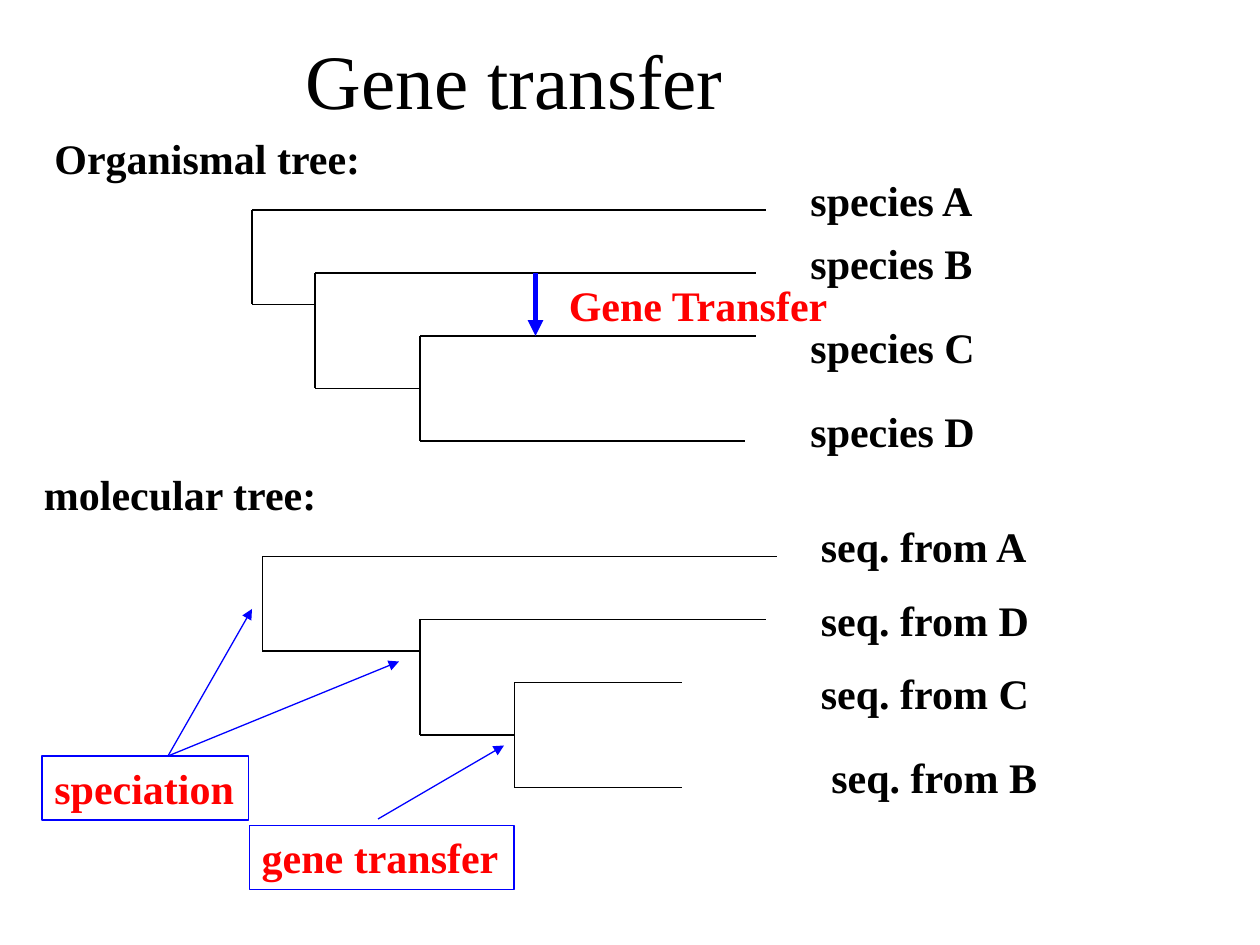
from dataclasses import dataclass

from lxml.etree import SubElement
from pptx import Presentation
from pptx.dml.color import RGBColor
from pptx.enum.shapes import MSO_CONNECTOR
from pptx.enum.text import MSO_ANCHOR, PP_ALIGN
from pptx.oxml.ns import qn
from pptx.util import Inches, Length, Pt

FONT = "Times New Roman"
BLACK, BLUE, RED = "000000", "0000FF", "FF0000"
CELLS_PER_INCH = 12  # the slide is a grid of 120 columns by 90 rows


@dataclass
class Clade:
    """A fork at one column, with an upper and a lower branch."""
    col: float
    top: float
    bottom: float
    top_end: float
    bottom_end: float


@dataclass
class Label:
    text: str
    col: float
    row: float
    cols: float
    rows: float = 6
    color: str = BLACK
    size: float = 24
    bold: bool = True
    border: str = ""
    centred: bool = False


@dataclass
class Arrow:
    start: tuple[float, float]
    end: tuple[float, float]
    width: float = 0.75


ORGANISMAL_TREE = [
    Clade(24, 20, 29, 73, 30),
    Clade(30, 26, 37, 72, 40),
    Clade(40, 32, 42, 72, 71),
]
MOLECULAR_TREE = [
    Clade(25, 53, 62, 74, 40),
    Clade(40, 59, 70, 73, 49),
    Clade(49, 65, 75, 65, 65),
]
LABELS = [
    Label("Gene transfer", 0, 0, 98, 15, size=44, bold=False, centred=True),
    Label("Organismal tree:", 4, 12, 32.6),
    Label("species A", 76, 16, 18.4),
    Label("species B", 76, 22, 18.4),
    Label("species C", 76, 30, 18.6),
    Label("species D", 76, 38, 18.6),
    Label("Gene Transfer", 53, 26, 27.4, color=RED),
    Label("molecular tree:", 3, 44, 28.7),
    Label("seq. from A", 77, 49, 22.3),
    Label("seq. from D", 77, 56, 22.4),
    Label("seq. from C", 77, 63, 22.4),
    Label("seq. from B", 78, 71, 22.2),
    Label("speciation", 4, 72, 19.7, 6.1, RED, border=BLUE),
    Label("gene transfer", 23.75, 78.6, 25.2, 6.1, RED, border=BLUE),
]
ARROWS = [
    Arrow((51, 26), (51, 32), 3),
    Arrow((16, 72), (24, 58)),
    Arrow((16, 72), (38, 63)),
    Arrow((36, 78), (48, 71)),
]


def cells(n: float) -> Length:
    return Inches(n / CELLS_PER_INCH)


def rgb(color: str) -> RGBColor:
    return RGBColor.from_string(color)


def add_line(s, start, end, color: str = BLACK, width: float = 0.75):
    line = s.shapes.add_connector(
        MSO_CONNECTOR.STRAIGHT, *(cells(n) for n in (*start, *end)))
    line.line.color.rgb = rgb(color)
    line.line.width = Pt(width)
    SubElement(line._element.spPr, qn("a:effectLst"))
    return line


def add_arrow(s, arrow: Arrow) -> None:
    line = add_line(s, arrow.start, arrow.end, BLUE, arrow.width)
    SubElement(line.line._get_or_add_ln(), qn("a:tailEnd"), type="triangle")


def add_clade(s, clade: Clade) -> None:
    upper, lower = (clade.col, clade.top), (clade.col, clade.bottom)
    add_line(s, upper, lower)
    add_line(s, upper, (clade.top_end, clade.top))
    add_line(s, lower, (clade.bottom_end, clade.bottom))


def add_label(s, label: Label) -> None:
    sp = s.shapes.add_textbox(
        *(cells(n) for n in (label.col, label.row, label.cols, label.rows)))
    if label.border:
        sp.line.color.rgb = rgb(label.border)
        sp.line.width = Pt(0.75)
    tf = sp.text_frame
    tf.word_wrap = label.centred
    tf.text = label.text
    p = tf.paragraphs[0]
    if label.centred:
        tf.vertical_anchor = MSO_ANCHOR.MIDDLE
        p.alignment = PP_ALIGN.CENTER
    font = p.runs[0].font
    font.name, font.size, font.bold = FONT, Pt(label.size), label.bold
    font.color.rgb = rgb(label.color)


def main() -> None:
    prs = Presentation()
    prs.slide_width, prs.slide_height = Inches(10), Inches(7.5)
    s = prs.slides.add_slide(prs.slide_layouts[6])
    for clade in ORGANISMAL_TREE + MOLECULAR_TREE:
        add_clade(s, clade)
    for arrow in ARROWS:
        add_arrow(s, arrow)
    for label in LABELS:
        add_label(s, label)
    prs.save("out.pptx")


if __name__ == "__main__":
    main()
